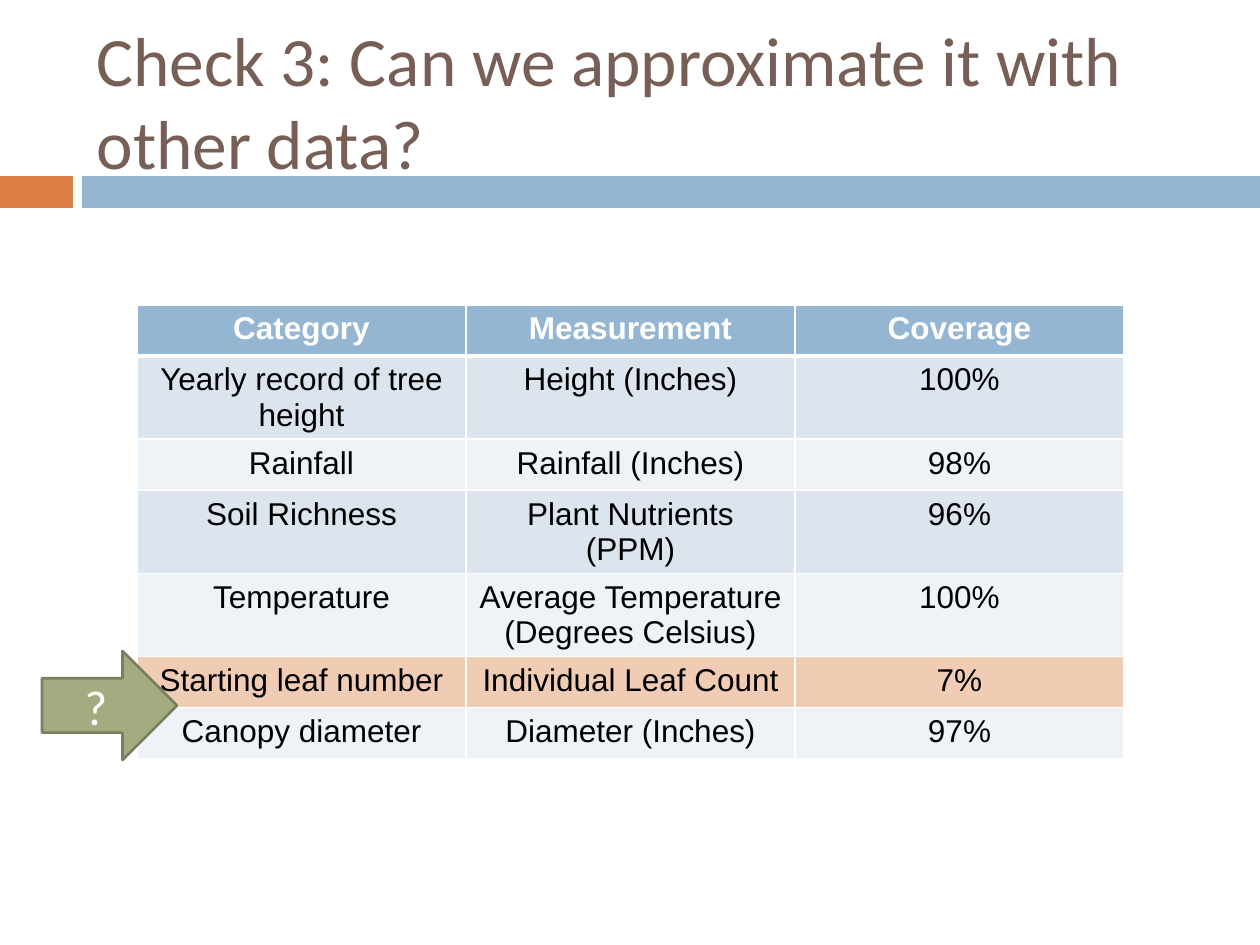
from lxml import etree
from pptx import Presentation
from pptx import util as u
from pptx.dml.color import RGBColor
from pptx.enum import shapes, text
from pptx.oxml import ns

PX = 914400 / 126

WHITE = RGBColor(0xFF, 0xFF, 0xFF)
BLACK = RGBColor(0x00, 0x00, 0x00)
BROWN = RGBColor(0x77, 0x5F, 0x55)
ORANGE = RGBColor(0xDD, 0x80, 0x47)
BLUE = RGBColor(0x94, 0xB6, 0xD2)
BAND_DARK = RGBColor(0xDC, 0xE5, 0xEE)
BAND_LIGHT = RGBColor(0xEE, 0xF3, 0xF7)
HIGHLIGHT = RGBColor(0xF1, 0xCC, 0xB5)
SAGE = RGBColor(0xA5, 0xAB, 0x81)
SAGE_DARK = RGBColor(0x7A, 0x7F, 0x5F)

COVERAGE = [
    ("Category", "Measurement", "Coverage"),
    ("Yearly record of tree height", "Height (Inches)", "100%"),
    ("Rainfall", "Rainfall (Inches)", "98%"),
    ("Soil Richness", "Plant Nutrients (PPM)", "96%"),
    ("Temperature", "Average Temperature (Degrees Celsius)", "100%"),
    ("Starting leaf number", "Individual Leaf Count", "7%"),
    ("Canopy diameter", "Diameter (Inches)", "97%"),
]
SPARSE_ROW = 5


def px(*lengths):
    return [u.Emu(round(length * PX)) for length in lengths]


class SlideBuilder:
    TITLE = {"name": "Calibri", "size": u.Pt(39.6), "color": BROWN}
    HEADER = {"name": "Arial", "size": u.Pt(18), "bold": True, "color": WHITE}
    BODY = {"name": "Arial", "size": u.Pt(18), "bold": False, "color": BLACK}
    MARK = {"name": "Calibri", "size": u.Pt(28), "color": WHITE}

    def __init__(self, deck):
        self.slide = deck.slides.add_slide(deck.slide_layouts[5])

    def set_text(self, frame, words, style, align):
        frame.text = words
        paragraph = frame.paragraphs[0]
        paragraph.alignment = align
        font = paragraph.runs[0].font
        for key, value in style.items():
            if key == "color":
                font.color.rgb = value
            else:
                setattr(font, key, value)

    def title(self, box, words):
        heading = self.slide.shapes.title
        for side, value in zip(("left", "top", "width", "height"), px(*box)):
            setattr(heading, side, value)
        frame = heading.text_frame
        self.set_text(frame, words, self.TITLE, text.PP_ALIGN.LEFT)
        layout = {"word_wrap": True, "auto_size": text.MSO_AUTO_SIZE.NONE,
                  "vertical_anchor": text.MSO_ANCHOR.MIDDLE}
        for key, value in layout.items():
            setattr(frame, key, value)

    def shape(self, kind, box, fill, outline=None, words=None):
        figure = self.slide.shapes.add_shape(kind, *px(*box))
        figure.shadow.inherit = False
        figure.fill.solid()
        figure.fill.fore_color.rgb = fill
        if outline:
            figure.line.color.rgb = outline
            figure.line.width = u.Pt(1.5)
        else:
            figure.line.fill.background()
        if words:
            figure.text_frame.vertical_anchor = text.MSO_ANCHOR.MIDDLE
            self.set_text(figure.text_frame, words, self.MARK, text.PP_ALIGN.CENTER)

    def borders(self, cell, widths):
        properties = cell._tc.get_or_add_tcPr()
        for side, points in widths.items():
            edge = etree.SubElement(properties, ns.qn(f"a:ln{side}"), w=str(u.Pt(points)))
            paint = etree.SubElement(edge, ns.qn("a:solidFill"))
            etree.SubElement(paint, ns.qn("a:srgbClr"), val=str(WHITE))

    def table(self, left, top, column_width, row_height, rows, highlighted):
        columns = len(rows[0])
        box = px(left, top, column_width * columns, row_height * len(rows))
        grid = self.slide.shapes.add_table(len(rows), columns, *box).table
        for r, row in enumerate(rows):
            if r == 0:
                fill, style = BLUE, self.HEADER
            else:
                band = BAND_DARK if r % 2 else BAND_LIGHT
                fill, style = HIGHLIGHT if r == highlighted else band, self.BODY
            edges = {"L": 1, "R": 1, "T": 3 if r == 1 else 1, "B": 3 if r == 0 else 1}
            for c, words in enumerate(row):
                cell = grid.cell(r, c)
                self.set_text(cell.text_frame, words, style, text.PP_ALIGN.CENTER)
                self.borders(cell, edges)
                cell.fill.solid()
                cell.fill.fore_color.rgb = fill


def main():
    deck = Presentation()
    deck.slide_width, deck.slide_height = px(1260, 945)
    page = SlideBuilder(deck)
    kinds = shapes.MSO_SHAPE

    # Accent bar and title
    page.shape(kinds.RECTANGLE, (0, 176, 73, 32), ORANGE)
    page.shape(kinds.RECTANGLE, (82, 176, 1178, 32), BLUE)
    page.title((84, 32, 1124, 136), "Check 3: Can we approximate it with other data?")

    # Coverage of each measurement, with the sparse one highlighted
    page.table(137, 305, 329, 51, COVERAGE, SPARSE_ROW)

    # Arrow questioning the sparse row
    page.shape(kinds.RIGHT_ARROW, (42, 651, 135, 109), SAGE, SAGE_DARK, "?")

    deck.save("out.pptx")


if __name__ == "__main__":
    main()
